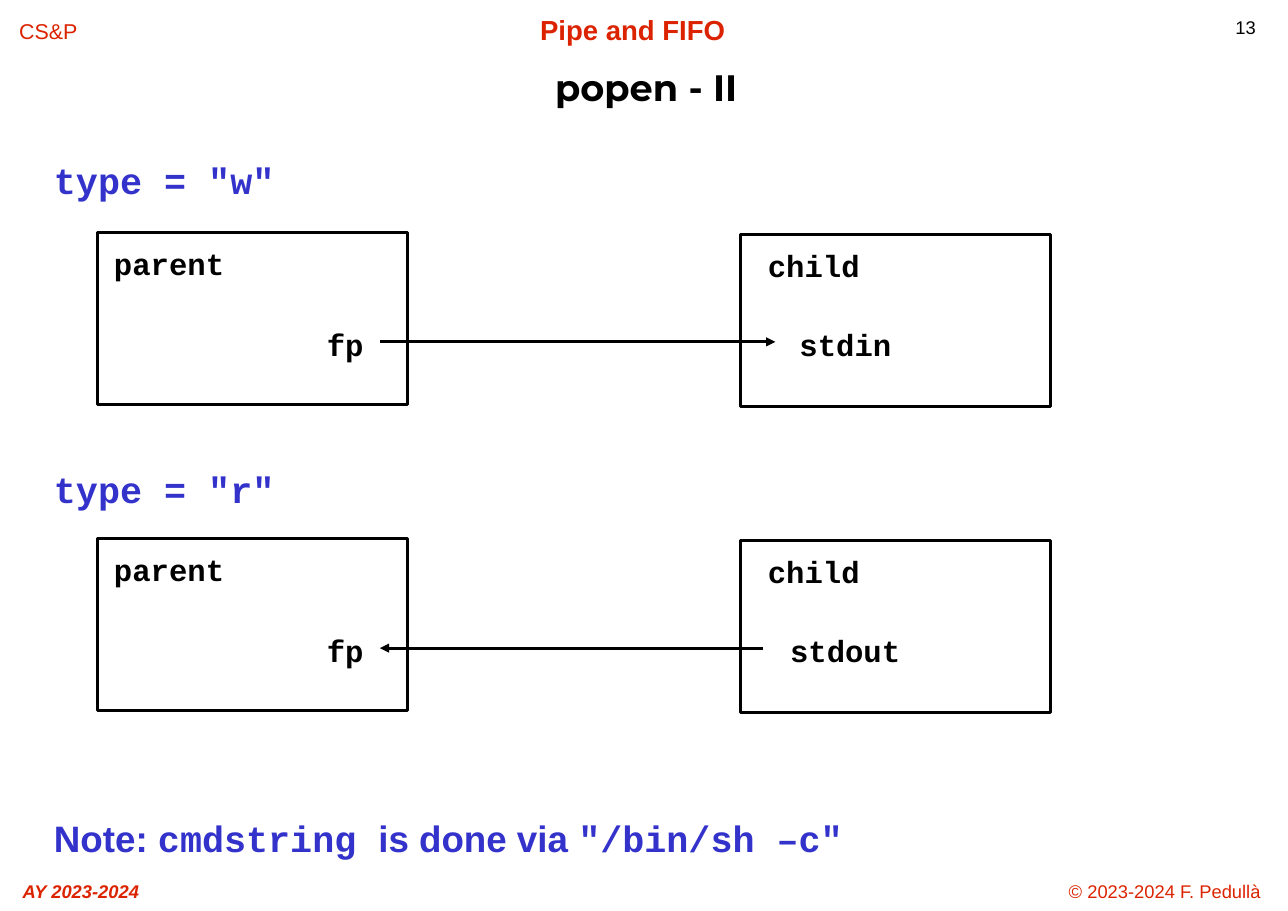
from pptx import Presentation
from pptx.dml.color import RGBColor
from pptx.enum.shapes import MSO_CONNECTOR as Connector, MSO_SHAPE as Preset
from pptx.enum.text import MSO_ANCHOR as Anchor, MSO_AUTO_SIZE as AutoSize, PP_ALIGN as Align
from pptx.oxml.ns import qn
from pptx.util import Cm, Pt
from lxml.etree import SubElement

BLACK, RED, BLUE = "000000", "DC2300", "3333CC"
SANS, MONO, HEADING = "Arial", "Courier New", "Montserrat"
ROW_PITCH = 7.06


def colour(value):
    return RGBColor.from_string(value)


def write(paragraph, text, size=12, font=SANS, ink=BLACK, bold=False, italic=False):
    """Append one formatted run to a paragraph."""
    run = paragraph.add_run()
    run.text = text
    run.font.size = Pt(size)
    run.font.name = font
    run.font.color.rgb = colour(ink)
    run.font.bold = bold
    run.font.italic = italic


def place(shape, left, top, width, height):
    shape.left, shape.top, shape.width, shape.height = map(Cm, (left, top, width, height))


def add_label(slide, text, left, top, width, height, align=Align.CENTER,
              anchor=Anchor.TOP, spacing=1.0, **style):
    label = slide.shapes.add_textbox(Cm(left), Cm(top), Cm(width), Cm(height))
    frame = label.text_frame
    frame.word_wrap = True
    frame.vertical_anchor = anchor
    paragraph = frame.paragraphs[0]
    paragraph.alignment = align
    paragraph.line_spacing = spacing
    write(paragraph, text, **style)


def add_code_label(slide, text, left, top, width):
    add_label(slide, text, left, top, width, 1.4, anchor=Anchor.MIDDLE, spacing=1.12,
              size=20, font=MONO, bold=True)


def add_process(slide, name, left, top, name_left, name_width):
    process = slide.shapes.add_shape(Preset.RECTANGLE, Cm(left), Cm(top), Cm(7.16), Cm(3.96))
    process.shadow.inherit = False
    process.fill.background()
    process.line.color.rgb = colour(BLACK)
    process.line.width = Pt(2)
    add_code_label(slide, name, name_left, top - 0.05, name_width)


def add_arrow(slide, start, end, y):
    arrow = slide.shapes.add_connector(Connector.STRAIGHT, Cm(start), Cm(y), Cm(end), Cm(y))
    arrow.line.color.rgb = colour(BLACK)
    arrow.line.width = Pt(2)
    SubElement(arrow.line._get_or_add_ln(), qn("a:tailEnd"), type="triangle")
    SubElement(arrow._element.spPr, qn("a:effectLst"))


def add_pipe(slide, row, stream, stream_left, stream_width, to_child):
    """Draw parent and child joined by an arrow in the direction of the data."""
    shift = row * ROW_PITCH
    add_process(slide, "parent", 2.24, 5.36 + shift, 2.01, 3.78)
    add_process(slide, "child", 17.07, 5.41 + shift, 17.15, 3.23)
    add_code_label(slide, "fp", 7.16, 7.19 + shift, 1.6)
    add_code_label(slide, stream, stream_left, 7.19 + shift, stream_width)
    ends = (8.76, stream_left) if to_child else (stream_left, 8.76)
    add_arrow(slide, *ends, 7.88 + shift)


def fill_title(title):
    place(title, 0.74, 1.27, 28.32, 1.6)
    frame = title.text_frame
    frame.auto_size = AutoSize.NONE
    frame.vertical_anchor = Anchor.MIDDLE
    paragraph = frame.paragraphs[0]
    paragraph.alignment = Align.CENTER
    paragraph.line_spacing = 0.85
    write(paragraph, "popen - II", size=24, font=HEADING, bold=True)


def fill_body(body):
    place(body, 0.99, 3.1, 27.71, 16.61)
    frame = body.text_frame
    frame.auto_size = AutoSize.NONE
    frame.margin_top = Cm(0.53)
    lines = [
        (0, [('type = "w"', MONO)]),
        (173.4, [('type = "r"', MONO)]),
        (199, [("Note: ", SANS), ("cmdstring ", MONO),
               ("is done via ", SANS), ('"/bin/sh –c"', MONO)]),
    ]
    for index, (gap, parts) in enumerate(lines):
        paragraph = frame.add_paragraph() if index else frame.paragraphs[0]
        properties = paragraph._p.get_or_add_pPr()
        properties.set("marL", "0")
        properties.set("indent", "0")
        SubElement(properties, qn("a:buNone"))
        paragraph.space_before = Pt(gap)
        paragraph.line_spacing = 1.0
        for text, font in parts:
            write(paragraph, text, size=24, font=font, ink=BLUE, bold=True)


def add_header_and_footer(slide):
    add_label(slide, "13", 28.24, 0.25, 1.4, 0.89, align=Align.LEFT)
    add_label(slide, "© 2023-2024 F. Pedullà", 24.03, 20.17, 5.66, 0.84, ink=RED)
    add_label(slide, "AY 2023-2024", 0, 20.17, 3.73, 0.84, ink=RED, bold=True, italic=True)
    add_label(slide, "Pipe and FIFO", 10.54, 0.18, 8.1, 0.84, size=18, ink=RED, bold=True)
    add_label(slide, "CS&P", 0.15, 0.3, 1.93, 0.84, size=14, ink=RED)


def main():
    deck = Presentation()
    deck.slide_width, deck.slide_height = Cm(29.7), Cm(21)
    slide = deck.slides.add_slide(deck.slide_layouts[1])
    add_header_and_footer(slide)
    fill_title(slide.shapes.title)
    fill_body(slide.placeholders[1])
    add_pipe(slide, 0, "stdin", 17.88, 3.23, to_child=True)
    add_pipe(slide, 1, "stdout", 17.6, 3.78, to_child=False)
    deck.save("out.pptx")


if __name__ == "__main__":
    main()
